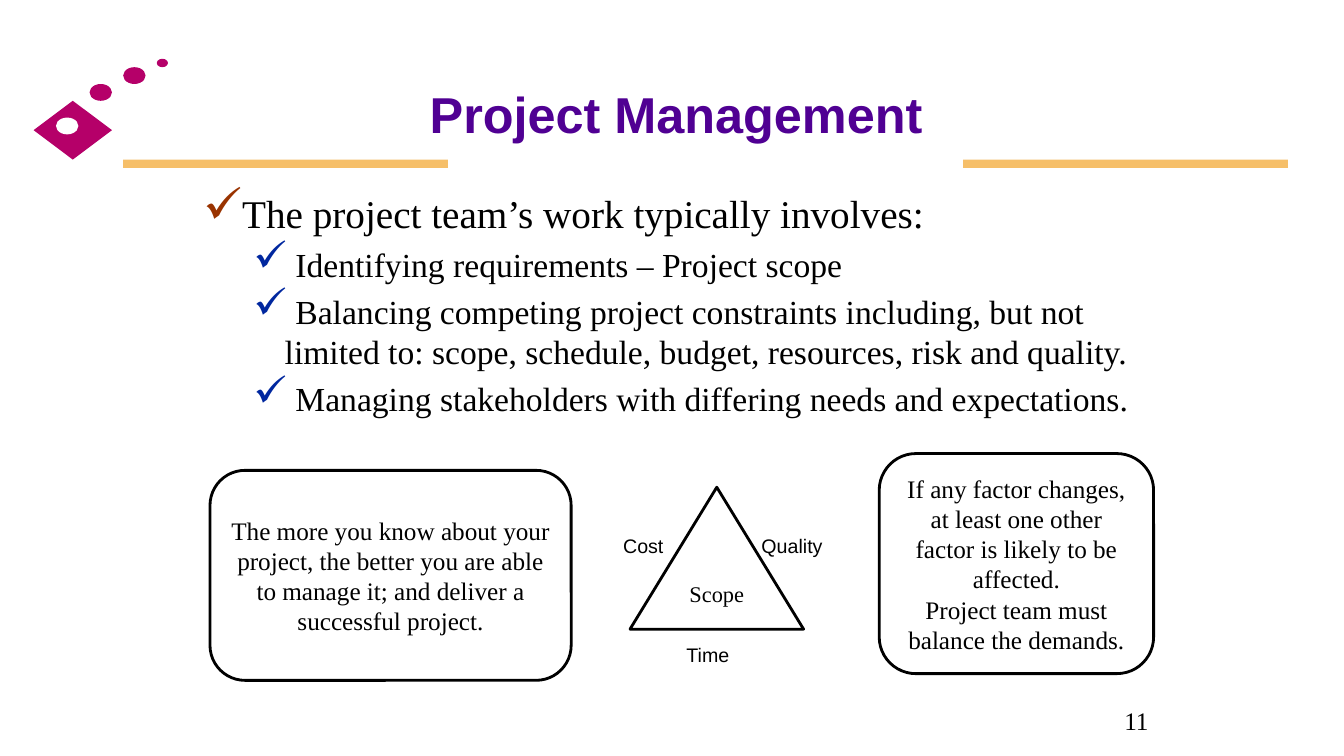
"""Builds the Project Management slide on a grid of 120 columns by 90 rows."""
from dataclasses import dataclass

from lxml.etree import SubElement
from pptx import Presentation
from pptx.dml.color import RGBColor
from pptx.enum.shapes import MSO_SHAPE as SHAPE
from pptx.enum.text import MSO_ANCHOR as ANCHOR, PP_ALIGN as ALIGN
from pptx.oxml.ns import qn
from pptx.util import Inches, Pt


@dataclass(frozen=True)
class Theme:
    serif: str = "Times New Roman"
    sans: str = "Arial"
    ink: str = "000000"
    paper: str = "FFFFFF"
    title: str = "500093"
    accent: str = "B50069"
    bar: str = "F6BF69"
    checks: tuple = ("993300", "00279F")
    title_size: int = 36
    body_sizes: tuple = (28, 24)
    note_size: int = 18
    scope_size: int = 16
    label_size: int = 14
    outline: int = 2


T = Theme()
WIDTH, HEIGHT = 13.33, 7.5
COLS, ROWS = 120, 90

TITLE = ("Project Management", (20.25, 7.7, 80.25, 11.25))
PAGE = ("11", (99.5, 83.4, 5.5, 4.8))

DECOR = [
    (SHAPE.RECTANGLE, (11, 19, 29, 1), T.bar),
    (SHAPE.DIAMOND, (3, 12, 7, 7), T.accent),
    (SHAPE.OVAL, (5, 14, 2, 2), T.paper),
    (SHAPE.OVAL, (8, 10, 2, 2), T.accent),
    (SHAPE.OVAL, (11, 8, 2, 2), T.accent),
    (SHAPE.OVAL, (14, 7, 1, 1), T.accent),
    (SHAPE.RECTANGLE, (86, 19, 29, 1), T.bar),
]

BODY_AREA = (17.25, 22, 85.5, 35)
INDENTS = [(0.38, -0.38), (0.81, -0.31)]
BODY = [
    (0, "The project team’s work typically involves:"),
    (1, " Identifying requirements – Project scope"),
    (1, " Balancing competing project constraints including, but not limited to: "
        "scope, schedule, budget, resources, risk and quality."),
    (1, " Managing stakeholders with differing needs and expectations."),
]

PANELS = [
    (SHAPE.ROUNDED_RECTANGLE, (18.75, 56, 32.25, 25), T.note_size,
     "The more you know about your project, the better you are able to manage it; "
     "and deliver a successful project."),
    (SHAPE.ROUNDED_RECTANGLE, (78.5, 54, 24.5, 26.2), T.note_size,
     "If any factor changes, at least one other factor is likely to be affected.\n"
     "Project team must balance the demands."),
    (SHAPE.ISOSCELES_TRIANGLE, (56.25, 58, 15.5, 16.9), T.scope_size, "Scope"),
]

LABELS = [
    ("Quality", (67.1, 63, 7.8, 4.1)),
    ("Time", (60.4, 76, 7.8, 4.1)),
    ("Cost", (54.75, 63, 7.3, 4.1)),
]


def place(area):
    col, row, cols, rows = area
    dx, dy = WIDTH / COLS, HEIGHT / ROWS
    return Inches(col * dx), Inches(row * dy), Inches(cols * dx), Inches(rows * dy)


def style(p, size, name=T.serif, color=T.ink, bold=False):
    for r in p.runs:
        r.font.size, r.font.name, r.font.bold = Pt(size), name, bold
        r.font.color.rgb = RGBColor.from_string(color)


def add_shape(slide, kind, area, fill):
    sp = slide.shapes.add_shape(kind, *place(area))
    sp.shadow.inherit = False
    sp.fill.solid()
    sp.fill.fore_color.rgb = RGBColor.from_string(fill)
    sp.line.fill.background()
    return sp


def add_text(slide, area, text, size, **look):
    tf = slide.shapes.add_textbox(*place(area)).text_frame
    tf.word_wrap = True
    tf.text = text
    style(tf.paragraphs[0], size, **look)
    return tf


def add_check(p, level):
    pPr = p._p.get_or_add_pPr()
    left, hang = INDENTS[level]
    pPr.set("marL", str(Inches(left)))
    pPr.set("indent", str(Inches(hang)))
    color = SubElement(pPr, qn("a:buClr"))
    SubElement(color, qn("a:srgbClr"), val=T.checks[level])
    SubElement(pPr, qn("a:buSzPct"), val="127000")
    SubElement(pPr, qn("a:buChar"), char="✓")


def add_body(slide):
    tf = slide.shapes.add_textbox(*place(BODY_AREA)).text_frame
    tf.word_wrap = True
    for i, (level, text) in enumerate(BODY):
        p = tf.add_paragraph() if i else tf.paragraphs[0]
        p.text, p.level = text, level
        add_check(p, level)
        size = T.body_sizes[level]
        if i:
            p.space_before = Pt(size * 0.2)
        style(p, size)


def add_panel(slide, kind, area, size, text):
    sp = add_shape(slide, kind, area, T.paper)
    sp.line.color.rgb = RGBColor.from_string(T.ink)
    sp.line.width = Pt(T.outline)
    tf = sp.text_frame
    tf.word_wrap, tf.vertical_anchor = True, ANCHOR.MIDDLE
    tf.text = text
    for p in tf.paragraphs:
        p.alignment = ALIGN.CENTER
        style(p, size)


def main():
    prs = Presentation()
    prs.slide_width, prs.slide_height = Inches(WIDTH), Inches(HEIGHT)
    slide = prs.slides.add_slide(prs.slide_layouts[6])
    for kind, area, fill in DECOR:
        add_shape(slide, kind, area, fill)
    add_body(slide)
    text, area = PAGE
    add_text(slide, area, text, T.note_size)
    text, area = TITLE
    tf = add_text(slide, area, text, T.title_size, name=T.sans, color=T.title, bold=True)
    tf.vertical_anchor = ANCHOR.MIDDLE
    tf.paragraphs[0].alignment = ALIGN.CENTER
    tf.paragraphs[0].line_spacing = 1.04
    for panel in PANELS:
        add_panel(slide, *panel)
    for text, area in LABELS:
        add_text(slide, area, text, T.label_size, name=T.sans)
    prs.save("out.pptx")


if __name__ == "__main__":
    main()
